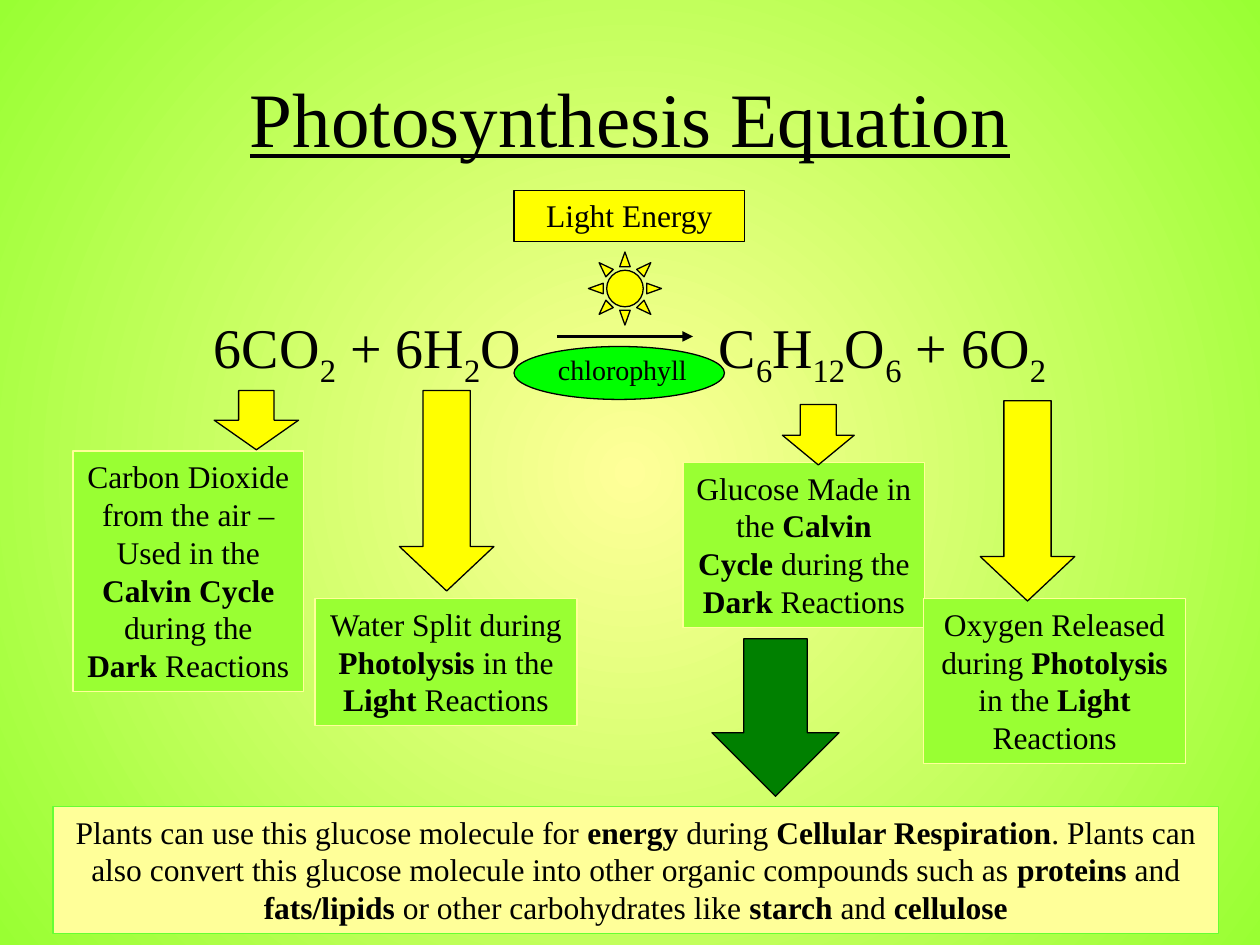
import pptx
import pptx.util
import pptx.dml.color
import pptx.enum.shapes
import pptx.enum.text
import pptx.oxml
import pptx.oxml.ns

Inches = pptx.util.Inches
SHAPE = pptx.enum.shapes.MSO_SHAPE
ALIGN = pptx.enum.text.PP_ALIGN
ANCHOR = pptx.enum.text.MSO_ANCHOR
FONT = "Times New Roman"
BLACK, YELLOW, CREAM, LIME = "000000", "FFFF00", "FFFF99", "99FF33"


def color(hex_string):
    """Turn a hex string into a colour."""
    return pptx.dml.color.RGBColor.from_string(hex_string)


def add_xml(parent, tag, inner="", attributes=""):
    """Append one drawing element to a parent element."""
    namespace = pptx.oxml.ns.nsdecls("a")
    parent.append(pptx.oxml.parse_xml(f"<a:{tag} {namespace} {attributes}>{inner}</a:{tag}>"))


def add_run(paragraph, text, size, bold=False, underline=False, subscript=False):
    """Add one formatted run to a paragraph."""
    run = paragraph.add_run()
    run.text = text
    run.font.name = FONT
    run.font.size = pptx.util.Pt(size)
    run.font.color.rgb = color(BLACK)
    run.font.bold = bold
    run.font.underline = underline
    if subscript:
        run._r.get_or_add_rPr().set("baseline", "-25000")


def write(shape, text, size=18, align=ALIGN.CENTER, anchor=ANCHOR.TOP, underline=False):
    """Fill a shape with text: *bold* and _subscript_ are marked in it."""
    frame = shape.text_frame
    frame.word_wrap = True
    frame.vertical_anchor = anchor
    paragraph = frame.paragraphs[0]
    paragraph.alignment = align
    for bold_index, bold_part in enumerate(text.split("*")):
        for sub_index, part in enumerate(bold_part.split("_")):
            if part:
                add_run(paragraph, part, size, bold_index % 2 == 1, underline, sub_index % 2 == 1)


def add_text(slide, box, text, **style):
    """Add a plain text box."""
    write(slide.shapes.add_textbox(*map(Inches, box)), text, **style)


def add_figure(slide, kind, box, fill, line=BLACK, adjustments=()):
    """Add a filled and outlined preset shape."""
    shape = slide.shapes.add_shape(kind, *map(Inches, box))
    shape.shadow.inherit = False
    shape.fill.solid()
    shape.fill.fore_color.rgb = color(fill)
    shape.line.color.rgb = color(line)
    shape.line.width = pptx.util.Pt(0.75)
    for index, value in enumerate(adjustments):
        shape.adjustments[index] = value
    return shape


def add_panel(slide, box, text, fill=LIME, line=CREAM):
    """Add a rectangle that holds centred text."""
    write(add_figure(slide, SHAPE.RECTANGLE, box, fill, line), text)


def add_down_arrow(slide, box, fill=YELLOW, adjustments=(0.5, 0.5)):
    """Add a block arrow that points down."""
    add_figure(slide, SHAPE.DOWN_ARROW, box, fill, adjustments=adjustments)


def paint_background(slide):
    """Paint a round gradient from the middle of the slide."""
    fill = slide.background.fill
    fill.gradient()
    for stop, shade in zip(fill.gradient_stops, (CREAM, LIME)):
        stop.color.rgb = color(shade)
    gradient = next(slide.element.iter(pptx.oxml.ns.qn("a:gradFill")))
    gradient.remove(gradient.find(pptx.oxml.ns.qn("a:lin")))
    middle = '<a:fillToRect l="50000" t="50000" r="50000" b="50000"/>'
    add_xml(gradient, "path", middle, 'path="circle"')


def add_equation(slide, box):
    """Write both sides of the equation at the ends of the box."""
    left, top, width, height = box
    add_text(slide, (left, top, 2.9, height), "6CO_2_ + 6H_2_O", size=32, align=ALIGN.LEFT)
    add_text(slide, (left + width - 2.9, top, 2.9, height), "C_6_H_12_O_6_ + 6O_2_",
             size=32, align=ALIGN.RIGHT)


def add_reaction_conditions(slide, box):
    """Add the light, the reaction arrow and the chlorophyll."""
    left, top, width, height = box
    add_panel(slide, (left, top, width, 0.41), "Light Energy", YELLOW, BLACK)
    add_figure(slide, SHAPE.SUN, (left + 0.59, top + 0.49, 0.58, 0.58), YELLOW, adjustments=(0.25,))
    line_top = Inches(top + 1.16)
    arrow = slide.shapes.add_connector(pptx.enum.shapes.MSO_CONNECTOR.STRAIGHT,
                                       Inches(left + 0.34), line_top, Inches(left + 1.42), line_top)
    arrow.line.color.rgb = color(BLACK)
    arrow.line.width = pptx.util.Pt(2)
    add_xml(arrow.line._get_or_add_ln(), "tailEnd", attributes='type="triangle"')
    add_xml(arrow._element.spPr, "effectLst")
    bottom = top + height - 0.42
    add_figure(slide, SHAPE.OVAL, (left, bottom, 1.67, 0.42), "00FF00")
    add_text(slide, (left + 0.25, bottom, 1.25, 0.37), "chlorophyll", size=16, align=ALIGN.LEFT)


def add_explanation(slide, box, text, arrow_box, adjustments):
    """Add a panel and the arrow that leads down to it."""
    add_panel(slide, box, text)
    add_down_arrow(slide, arrow_box, adjustments=adjustments)


def add_glucose_uses(slide, box):
    """Add the closing panel and the green arrow above it."""
    left, top, width, height = box
    add_panel(slide, box, "Plants can use this glucose molecule for *energy* during "
              "*Cellular Respiration*. Plants can also convert this glucose molecule into other "
              "organic compounds such as *proteins* and *fats/lipids* or other carbohydrates "
              "like *starch* and *cellulose*", CREAM, "66FF33")
    add_down_arrow(slide, (left + 5.23, top - 1.33, 1.01, 1.25), "008000")


def main():
    """Build the slide and save it."""
    presentation = pptx.Presentation()
    presentation.slide_width, presentation.slide_height = Inches(10), Inches(7.5)
    slide = presentation.slides.add_slide(presentation.slide_layouts[6])
    paint_background(slide)
    add_text(slide, (0.5, 0.3, 9, 1.25), "Photosynthesis Equation", size=44,
             anchor=ANCHOR.MIDDLE, underline=True)
    add_equation(slide, (1.6, 2.43, 6.8, 0.65))
    explanations = (
        ((0.58, 3.58, 1.83, 1.91), "Carbon Dioxide from the air – Used in the *Calvin Cycle* "
         "during the *Dark* Reactions", (1.7, 3.1, 0.67, 0.47), (0.42, 0.5)),
        ((2.5, 4.75, 2.08, 1.01), "Water Split during *Photolysis* in the *Light* Reactions",
         (3.17, 3.1, 0.75, 1.59), (0.5, 0.47)),
        ((5.42, 3.67, 1.92, 1.31), "Glucose Made in the *Calvin Cycle* during the *Dark* Reactions",
         (6.21, 3.21, 0.57, 0.48), (0.5, 0.49)),
        ((7.33, 4.75, 2.08, 1.31), "Oxygen Released during *Photolysis* in the *Light* Reactions",
         (7.78, 3.18, 0.75, 1.59), (0.5, 0.47)),
    )
    for explanation in explanations:
        add_explanation(slide, *explanation)
    add_reaction_conditions(slide, (4.08, 1.51, 1.83, 1.66))
    add_glucose_uses(slide, (0.42, 6.4, 9.25, 1.01))
    presentation.save("out.pptx")


if __name__ == "__main__":
    main()
